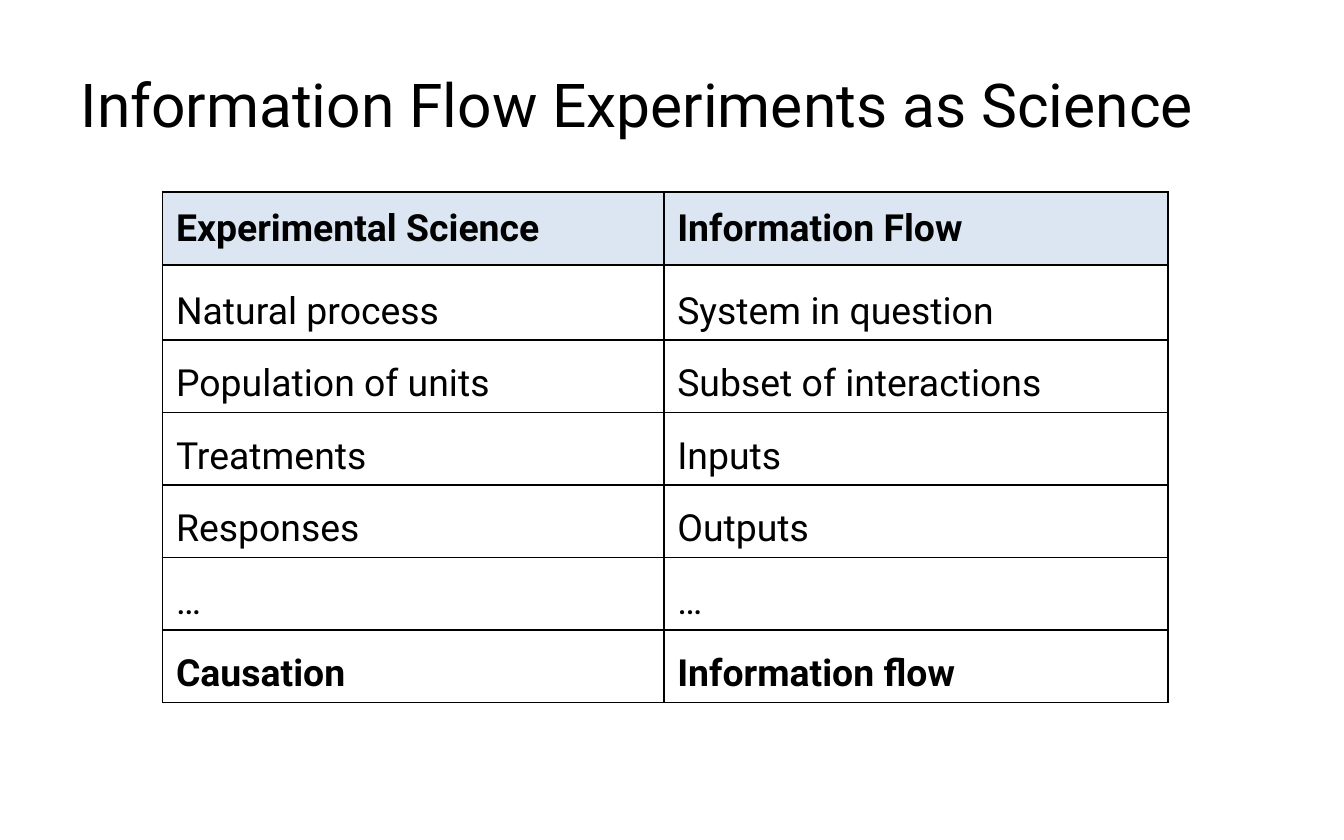
from lxml import etree
from pptx import Presentation
from pptx import util as u
from pptx.dml.color import RGBColor
from pptx.enum import text
from pptx.oxml.ns import qn

FONT = "Roboto"
BLACK = "000000"
HEADER_FILL = "DCE6F2"
COL_WIDTHS = [3.73, 3.75]
ROW_HEIGHTS = [0.54, 0.56] + [0.54] * 5
ROWS = [
    ("Experimental Science", "Information Flow"),
    ("Natural process", "System in question"),
    ("Population of units", "Subset of interactions"),
    ("Treatments", "Inputs"),
    ("Responses", "Outputs"),
    ("…", "…"),
    ("Causation", "Information flow"),
]


def rgb(color):
    return RGBColor.from_string(color)


def write(tf, words, size=20, bold=False, color=BLACK):
    p = tf.paragraphs[0]
    p.alignment = text.PP_ALIGN.LEFT
    r = p.add_run()
    r.text = words
    r.font.name = FONT
    r.font.size = u.Pt(size)
    r.font.bold = bold
    r.font.color.rgb = rgb(color)


def add_borders(cell, color=BLACK, width=1):
    """Line all four sides; call before filling, as the lines come first in tcPr."""
    tcPr = cell._tc.get_or_add_tcPr()
    for side in ("lnL", "lnR", "lnT", "lnB"):
        ln = etree.SubElement(tcPr, qn(f"a:{side}"), w=str(u.Pt(width)))
        fill = etree.SubElement(ln, qn("a:solidFill"))
        etree.SubElement(fill, qn("a:srgbClr"), val=color)


def set_title(s, words):
    sp = s.shapes.title
    sp.left, sp.top = u.Inches(0.5), u.Inches(0.25)
    sp.width, sp.height = u.Inches(9), u.Inches(1.04)
    sp.text_frame.word_wrap = True
    sp.text_frame.vertical_anchor = text.MSO_ANCHOR.MIDDLE
    write(sp.text_frame, words, size=32.4)


def format_cell(cell, words, header, bold):
    add_borders(cell)
    if header:
        cell.fill.solid()
        cell.fill.fore_color.rgb = rgb(HEADER_FILL)
    else:
        cell.fill.background()
    anchor = text.MSO_ANCHOR
    cell.vertical_anchor = anchor.MIDDLE if header else anchor.BOTTOM
    write(cell.text_frame, words, bold=bold)


def add_comparison_table(s):
    table = s.shapes.add_table(
        len(ROWS), len(COL_WIDTHS), u.Inches(1.21), u.Inches(1.43),
        u.Inches(sum(COL_WIDTHS)), u.Inches(sum(ROW_HEIGHTS))).table
    table.horz_banding = False
    for col, width in zip(table.columns, COL_WIDTHS):
        col.width = u.Inches(width)
    for i, (row, height) in enumerate(zip(table.rows, ROW_HEIGHTS)):
        row.height = u.Inches(height)
        for cell, words in zip(row.cells, ROWS[i]):
            format_cell(cell, words, header=i == 0, bold=i in (0, len(ROWS) - 1))


def main():
    prs = Presentation()
    prs.slide_width, prs.slide_height = u.Inches(10), u.Inches(6.25)
    s = prs.slides.add_slide(prs.slide_layouts[5])
    set_title(s, "Information Flow Experiments as Science")
    add_comparison_table(s)
    prs.save("out.pptx")


if __name__ == "__main__":
    main()
